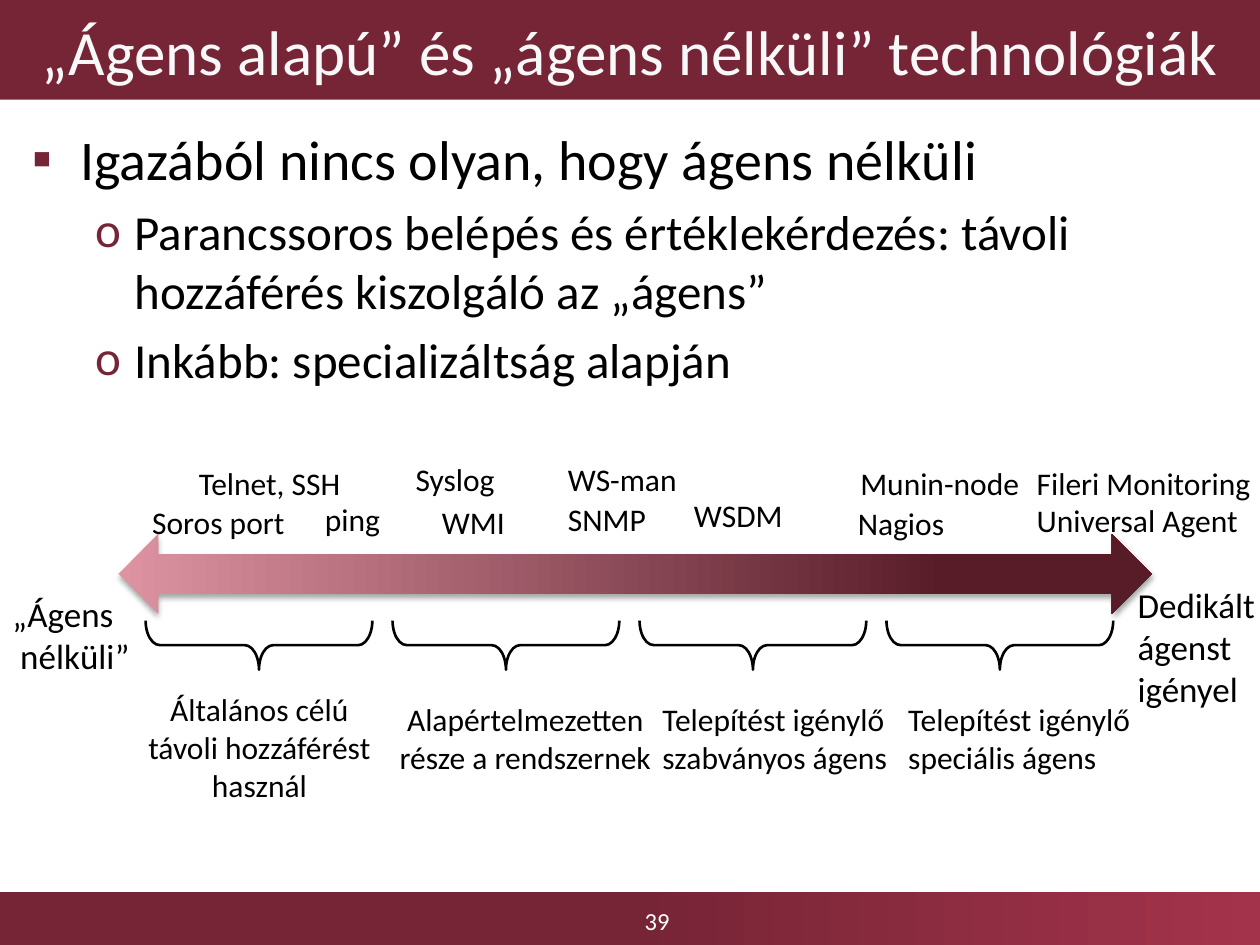
from lxml import etree
from pptx import Presentation
from pptx.dml.color import RGBColor
from pptx.enum.shapes import MSO_SHAPE
from pptx.enum.text import MSO_ANCHOR, PP_ALIGN
from pptx.oxml.ns import qn
from pptx.util import Inches, Pt

RECT, ARROW, BRACE = MSO_SHAPE.RECTANGLE, MSO_SHAPE.LEFT_RIGHT_ARROW, MSO_SHAPE.RIGHT_BRACE
LEFT, CENTER = PP_ALIGN.LEFT, PP_ALIGN.CENTER
TOP, MIDDLE = MSO_ANCHOR.TOP, MSO_ANCHOR.MIDDLE
FONT = "Calibri"
SLIDE_W = 10
LABEL_W = 2.4
COLORS = {
    "wine": "762536",
    "wine_light": "A3334B",
    "pink": "DD93A2",
    "wine_dark": "581C28",
    "title": "F8F8F8",
    "white": "FFFFFF",
    "black": "000000",
}

TECHNOLOGIES = [
    (1.48, 3.63, "Telnet, SSH"),
    (1.11, 3.94, "Soros port"),
    (2.48, 3.92, "ping"),
    (3.2, 3.6, "Syslog"),
    (3.41, 3.94, "WMI"),
    (4.41, 3.6, "WS-man"),
    (4.41, 3.92, "SNMP"),
    (5.41, 3.89, "WSDM"),
    (6.73, 3.63, "Munin-node"),
    (6.71, 3.95, "Nagios"),
    (8.13, 3.63, "Fileri Monitoring\nUniversal Agent"),
]
CATEGORIES = [
    (0.81, 5.43, "Általános célú\ntávoli hozzáférést\nhasznál", CENTER),
    (2.92, 5.51, "Alapértelmezetten\nrésze a rendszernek", CENTER),
    (5.16, 5.51, "Telepítést igénylő\nszabványos ágens", LEFT),
    (7.11, 5.51, "Telepítést igénylő\nspeciális ágens", LEFT),
]
ENDS = [
    (0, 4.65, "„Ágens\v nélküli”"),
    (8.93, 4.58, "Dedikált\nágenst \vigényel"),
]
BULLETS = [
    (0, "Igazából nincs olyan, hogy ágens nélküli"),
    (1, "Parancssoros belépés és értéklekérdezés: távoli hozzáférés kiszolgáló az „ágens”"),
    (1, "Inkább: specializáltság alapján"),
]
LEVELS = [("▪", 0.38, 0.38, 32), ("o", 0.81, 0.31, 28)]


def rgb(name):
    """Return the named colour."""
    return RGBColor.from_string(COLORS[name])


def write(p, text, size=18, color="black", align=LEFT):
    """Fill a paragraph with formatted text, \\v being a line break."""
    p.text = text
    p.alignment = align
    for r in p.runs:
        r.font.name = FONT
        r.font.size = Pt(size)
        r.font.color.rgb = rgb(color)


def add_text(s, x, y, text, w, h, anchor=TOP, right=0.1, **fmt):
    """Add a text box with one paragraph per line."""
    tf = s.shapes.add_textbox(Inches(x), Inches(y), Inches(w), Inches(h)).text_frame
    tf.word_wrap = True
    tf.vertical_anchor = anchor
    tf.margin_right = Inches(right)
    for i, line in enumerate(text.split("\n")):
        write(tf.add_paragraph() if i else tf.paragraphs[0], line, **fmt)


def add_label(s, x, y, text, **fmt):
    """Add a label wide enough for its lines and within the slide."""
    add_text(s, x, y, text, min(LABEL_W, SLIDE_W - x), 1, right=0, **fmt)


def add_shape(s, kind, x, y, w, h):
    """Add a preset shape without line or shadow."""
    sp = s.shapes.add_shape(kind, Inches(x), Inches(y), Inches(w), Inches(h))
    sp.shadow.inherit = False
    sp.line.fill.background()
    return sp


def fill_gradient(sp, *stops):
    """Fill a shape from left to right with two (position, colour) stops."""
    sp.fill.gradient()
    sp.fill.gradient_angle = 0
    for stop, (position, color) in zip(sp.fill.gradient_stops, stops):
        stop.position = position
        stop.color.rgb = rgb(color)


def add_shadow(sp):
    """Give a shape a soft shadow below it."""
    effects = sp._element.spPr.find(qn("a:effectLst"))
    shadow = etree.SubElement(effects, qn("a:outerShdw"), blurRad=str(Pt(3.1)),
                              dist=str(Pt(1.8)), dir="5400000", rotWithShape="0")
    color = etree.SubElement(shadow, qn("a:srgbClr"), val=COLORS["black"])
    etree.SubElement(color, qn("a:alpha"), val="35000")


def add_title(s, text):
    """Add the title band."""
    sp = add_shape(s, RECT, 0, 0, SLIDE_W, 0.79)
    sp.fill.solid()
    sp.fill.fore_color.rgb = rgb("wine")
    sp.text_frame.word_wrap = True
    sp.text_frame.vertical_anchor = MIDDLE
    write(sp.text_frame.paragraphs[0], text, size=36, color="title", align=CENTER)


def add_footer(s, number):
    """Add the footer band with the page number."""
    fill_gradient(add_shape(s, RECT, 0, 7.08, SLIDE_W, 0.42), (0.5, "wine"), (1, "wine_light"))
    add_text(s, 3.59, 7.11, number, 3.25, 0.39, anchor=MIDDLE,
             size=14, color="white", align=CENTER)


def add_bullets(s, items):
    """Add the bulleted body text."""
    tf = s.shapes.add_textbox(Inches(0.16), Inches(0.94), Inches(9.69), Inches(6.05)).text_frame
    tf.word_wrap = True
    for i, (level, text) in enumerate(items):
        char, margin, hanging, size = LEVELS[level]
        p = tf.add_paragraph() if i else tf.paragraphs[0]
        p.level = level
        pPr = p._p.get_or_add_pPr()
        pPr.set("marL", str(Inches(margin)))
        pPr.set("indent", str(-Inches(hanging)))
        color = etree.SubElement(pPr, qn("a:buClr"))
        etree.SubElement(color, qn("a:srgbClr"), val=COLORS["wine"])
        etree.SubElement(pPr, qn("a:buFont"), typeface=FONT)
        etree.SubElement(pPr, qn("a:buChar"), char=char)
        if i:
            p.space_before = Pt(size * 0.2)
        write(p, text, size=size)


def add_brace(s, x):
    """Add a brace that opens upwards."""
    sp = add_shape(s, BRACE, x, 4.22, 0.39, 1.8)
    sp.rotation = 90
    sp.adjustments[0] = 0.29
    sp.fill.background()
    sp.line.color.rgb = rgb("black")
    sp.line.width = Pt(1.5)


def main():
    """Build and save the slide."""
    prs = Presentation()
    prs.slide_width, prs.slide_height = Inches(SLIDE_W), Inches(7.5)
    s = prs.slides.add_slide(prs.slide_layouts[6])
    add_footer(s, "39")
    add_title(s, "„Ágens alapú” és „ágens nélküli” technológiák")
    add_bullets(s, BULLETS)
    arrow = add_shape(s, ARROW, 0.94, 4.24, 8.2, 0.63)
    fill_gradient(arrow, (0, "pink"), (0.8, "wine_dark"))
    add_shadow(arrow)
    for x, y, text in ENDS:
        add_label(s, x, y, text, size=20)
    for x, y, text in TECHNOLOGIES:
        add_label(s, x, y, text)
    for i, (x, y, text, align) in enumerate(CATEGORIES):
        add_brace(s, 1.86 + 1.96 * i)
        add_label(s, x, y, text, align=align)
    prs.save("out.pptx")


if __name__ == "__main__":
    main()
